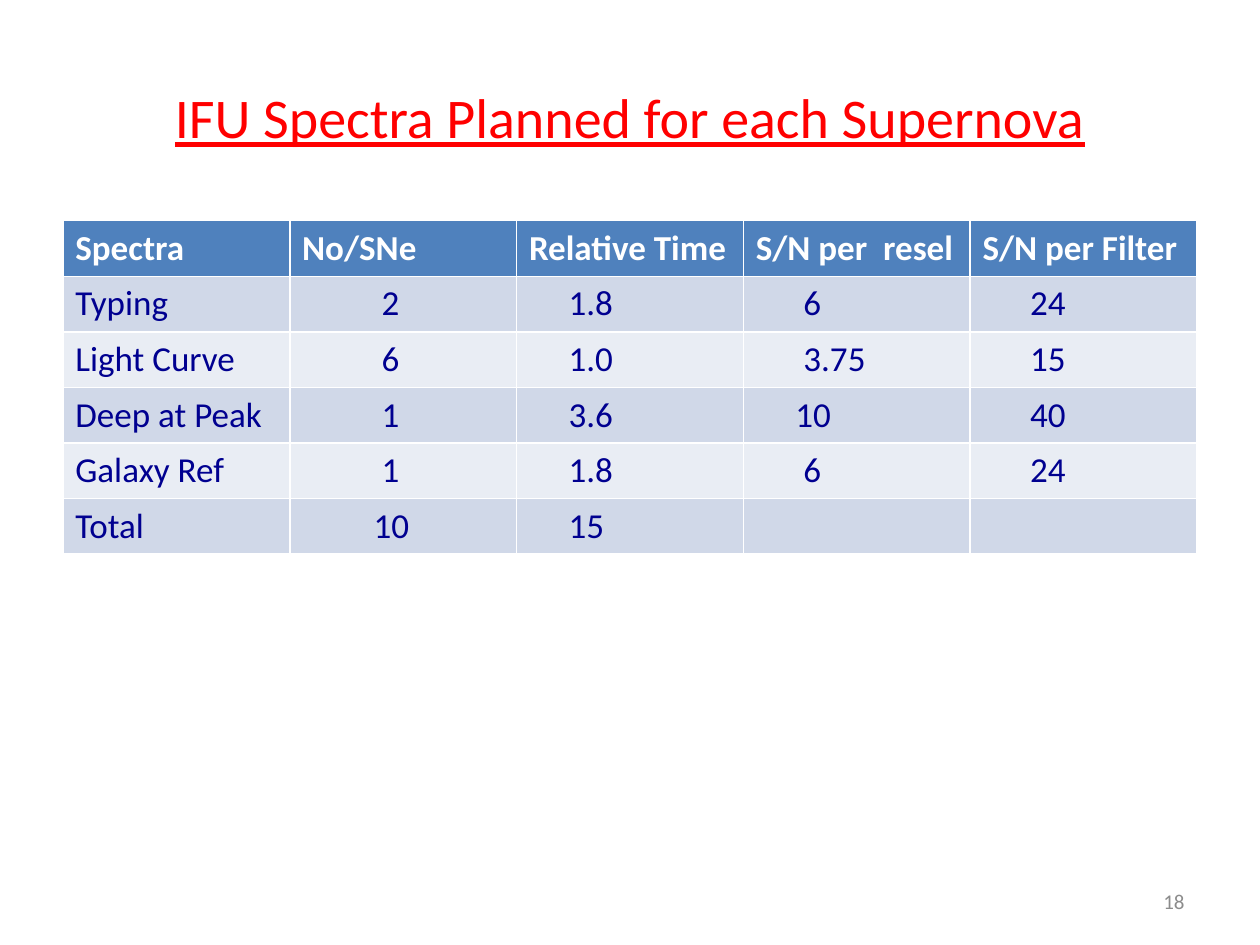
from dataclasses import dataclass

from pptx import Presentation
from pptx.dml.color import RGBColor
from pptx.enum.text import MSO_ANCHOR, PP_ALIGN
from pptx.table import Table, _Cell as Cell
from pptx.text.text import _Paragraph as Paragraph
from pptx.util import Cm, Pt

RED = RGBColor(0xFF, 0x00, 0x00)
WHITE = RGBColor(0xFF, 0xFF, 0xFF)
NAVY = RGBColor(0x00, 0x00, 0x90)
GRAY = RGBColor(0x8C, 0x8C, 0x8C)
HEADER_BLUE = RGBColor(0x4F, 0x81, 0xBD)
BANDS = (RGBColor(0xD0, 0xD8, 0xE8), RGBColor(0xE9, 0xED, 0xF4))

FONT = "Calibri"
TITLE_ONLY = 5
CELL_MARGIN = 0.25
ROW_HEIGHT = 1.12


@dataclass
class Column:
    """Lengths in cm; outdent moves two-digit integers to the left."""
    heading: str
    values: list[str]
    indent: float = 0
    outdent: float = 0

    def margin(self, value: str) -> float:
        two_digits = len(value.split(".")[0]) == 2
        return CELL_MARGIN + self.indent - (self.outdent if two_digits else 0)


COLUMNS = [
    Column("Spectra", ["Typing", "Light Curve", "Deep at Peak", "Galaxy Ref", "Total"]),
    Column("No/SNe", ["2", "6", "1", "1", "10"], indent=1.6, outdent=0.16),
    Column("Relative Time", ["1.8", "1.0", "3.6", "1.8", "15"], indent=0.8),
    Column("S/N per  resel", ["6", "3.75", "10", "6", ""], indent=0.96, outdent=0.16),
    Column("S/N per Filter", ["24", "15", "40", "24", ""], indent=0.96),
]


def format_paragraph(paragraph: Paragraph, size: int, color: RGBColor, bold: bool = False) -> None:
    font = paragraph.font
    font.name, font.size, font.bold = FONT, Pt(size), bold
    font.color.rgb = color


def fill_cell(cell: Cell, text: str, fill: RGBColor, color: RGBColor,
              margin: float = CELL_MARGIN, bold: bool = False) -> None:
    cell.text = text
    cell.margin_left = Cm(margin)
    cell.fill.solid()
    cell.fill.fore_color.rgb = fill
    format_paragraph(cell.text_frame.paragraphs[0], 20, color, bold)


def fill_column(table: Table, index: int, column: Column) -> None:
    fill_cell(table.cell(0, index), column.heading, HEADER_BLUE, WHITE, bold=True)
    for row, value in enumerate(column.values):
        fill_cell(table.cell(row + 1, index), value, BANDS[row % 2], NAVY, column.margin(value))


def main() -> None:
    presentation = Presentation()
    presentation.slide_width, presentation.slide_height = Cm(25.4), Cm(19.05)
    slide = presentation.slides.add_slide(presentation.slide_layouts[TITLE_ONLY])

    title = slide.shapes.title
    title.left, title.top, title.width, title.height = Cm(1.27), Cm(0.76), Cm(22.86), Cm(3.18)
    title.text_frame.text = "IFU Spectra Planned for each Supernova"
    title.text_frame.vertical_anchor = MSO_ANCHOR.MIDDLE
    heading = title.text_frame.paragraphs[0]
    heading.alignment = PP_ALIGN.CENTER
    format_paragraph(heading, 32, RED)
    heading.font.underline = True

    row_count = len(COLUMNS[0].values) + 1
    table = slide.shapes.add_table(row_count, len(COLUMNS), Cm(1.27), Cm(4.45),
                                   Cm(22.86), Cm(ROW_HEIGHT * row_count)).table
    for index, column in enumerate(COLUMNS):
        fill_column(table, index, column)

    number_frame = slide.shapes.add_textbox(Cm(18.21), Cm(17.65), Cm(5.92), Cm(1.02)).text_frame
    number_frame.word_wrap = True
    number_frame.vertical_anchor = MSO_ANCHOR.MIDDLE
    number_frame.text = "18"
    number = number_frame.paragraphs[0]
    number.alignment = PP_ALIGN.RIGHT
    format_paragraph(number, 12, GRAY)

    presentation.save("out.pptx")


if __name__ == "__main__":
    main()
